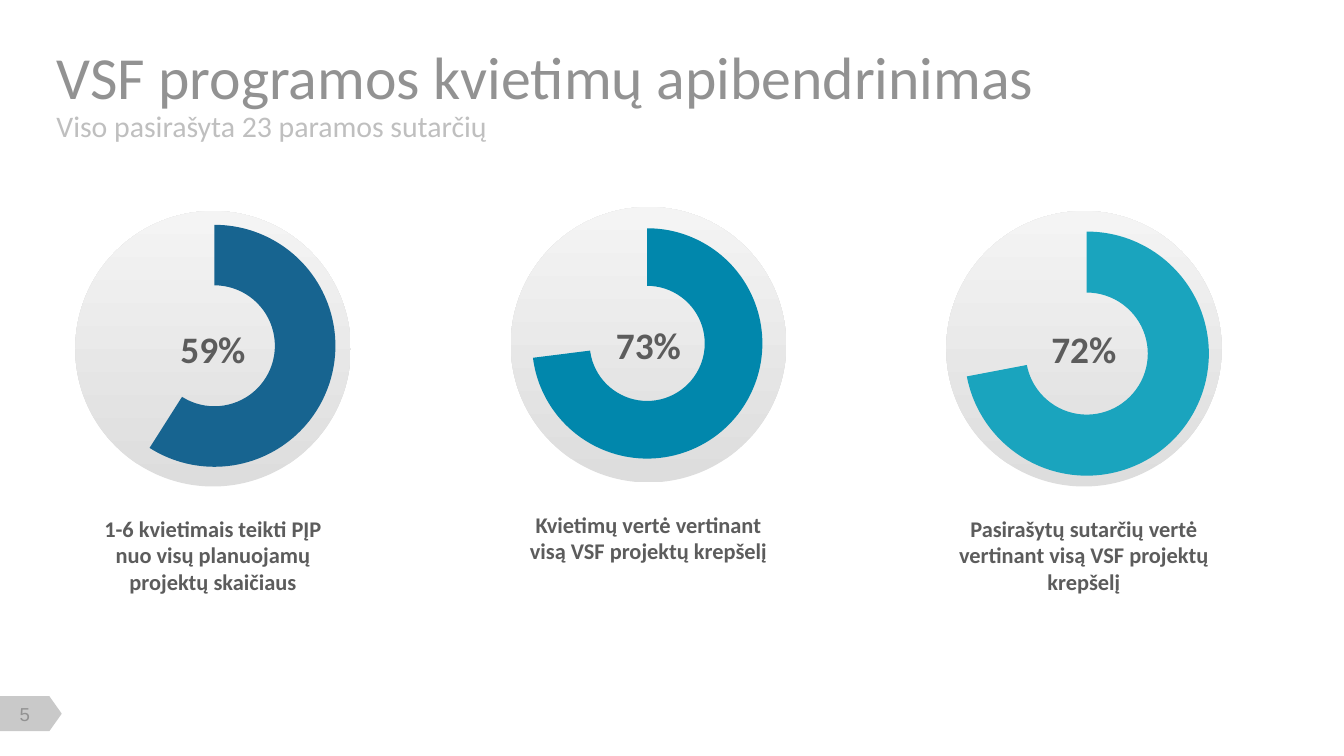
from lxml import etree
from pptx import Presentation
from pptx.chart.data import CategoryChartData
from pptx.dml.color import RGBColor
from pptx.enum.chart import XL_CHART_TYPE as Chart
from pptx.enum.shapes import MSO_SHAPE as Shape
from pptx.enum.text import MSO_ANCHOR as Anchor, PP_ALIGN as Align
from pptx.oxml.ns import qn
from pptx.util import Inches, Pt

TITLE = "VSF programos kvietimų apibendrinimas"
SUBTITLE = "Viso pasirašyta 23 paramos sutarčių"
PAGE_NUMBER = "5"
GAUGES = [
    dict(percent=59, color="176490", top=1.57, frame=(0.5, 1.44, 2.17, 2.29),
         plot=(0.09, 0.1, 0.83, 0.79),
         label="1-6 kvietimais teikti PĮP nuo visų planuojamų projektų skaičiaus"),
    dict(percent=73, color="0187AC", top=1.54, frame=(3.72, 1.4, 2.17, 2.29),
         plot=(0.11, 0.13, 0.79, 0.75),
         label="Kvietimų vertė vertinant visą VSF projektų krepšelį"),
    dict(percent=72, color="1AA4BE", top=1.57, frame=(6.98, 1.44, 2.17, 2.36),
         plot=(0.09, 0.12, 0.84, 0.77),
         label="Pasirašytų sutarčių vertė vertinant visą VSF projektų krepšelį"),
]
SLIDE_WIDTH = 10
SLIDE_HEIGHT = SLIDE_WIDTH * 9 / 16
LEFT, STEP, DISC = 0.56, 3.24, 2.05
LABEL_WIDTH, LABEL_DROP = 1.9, 2.26
MARGIN = 0.42
DARK, GRAY = "5C5C5C", "929292"


def rgb(value):
    return RGBColor.from_string(value)


def inches(*lengths):
    return [Inches(length) for length in lengths]


def write(shape, text, size, color, bold=False, align=Align.CENTER,
          anchor=Anchor.MIDDLE, font="Calibri", insets=(0, 0, 0, 0)):
    frame = shape.text_frame
    frame.word_wrap = True
    frame.vertical_anchor = anchor
    (frame.margin_left, frame.margin_top,
     frame.margin_right, frame.margin_bottom) = inches(*insets)
    para = frame.paragraphs[0]
    para.text = text
    para.alignment = align
    para.font.name, para.font.size, para.font.bold = font, Pt(size), bold
    para.font.color.rgb = rgb(color)


def add_plain_shape(page, kind, *box):
    shape = page.shapes.add_shape(kind, *inches(*box))
    shape.shadow.inherit = False
    shape.line.fill.background()
    return shape


def add_disc(page, left, gauge):
    disc = add_plain_shape(page, Shape.OVAL, left, gauge["top"], DISC, DISC)
    disc.fill.gradient()
    disc.fill.gradient_angle = 90
    for stop, color in zip(disc.fill.gradient_stops, ("DDDDDD", "F4F4F4")):
        stop.color.rgb = rgb(color)
    write(disc, f"{gauge['percent']}%", 20, DARK, bold=True)


def place_plot(chart, plot):
    area = chart._chartSpace.chart.plotArea
    for old in area.findall(qn("c:layout")):
        area.remove(old)
    layout = etree.Element(qn("c:layout"))
    manual = etree.SubElement(layout, qn("c:manualLayout"))
    settings = [("layoutTarget", "inner"), ("xMode", "edge"), ("yMode", "edge")]
    for tag, value in settings + list(zip("xywh", plot)):
        etree.SubElement(manual, qn(f"c:{tag}")).set("val", str(value))
    area.insert(0, layout)
    area.find(".//" + qn("c:holeSize")).set("val", "64")


def add_ring(page, gauge):
    data = CategoryChartData()
    data.categories = ["1", "2"]
    data.add_series("Series 1", (gauge["percent"], 100 - gauge["percent"]))
    chart = page.shapes.add_chart(Chart.DOUGHNUT, *inches(*gauge["frame"]), data).chart
    chart.has_legend = chart.has_title = False
    chart.font.name, chart.font.size = "Calibri", Pt(18)
    chart.font.color.rgb = rgb("262626")
    chart.plots[0].vary_by_categories = False
    filled, rest = (chart.series[0].points[index].format for index in range(2))
    filled.fill.solid()
    filled.fill.fore_color.rgb = rgb(gauge["color"])
    rest.fill.background()
    for part in (filled, rest):
        part.line.fill.background()
    place_plot(chart, gauge["plot"])


def add_label(page, left, gauge):
    box = page.shapes.add_textbox(*inches(
        left + (DISC - LABEL_WIDTH) / 2, gauge["top"] + LABEL_DROP, LABEL_WIDTH, 0.61))
    write(box, gauge["label"], 12, DARK, bold=True, anchor=Anchor.TOP)


def main():
    """Build the slide with three percentage gauges."""
    deck = Presentation()
    deck.slide_width, deck.slide_height = inches(SLIDE_WIDTH, SLIDE_HEIGHT)
    page = deck.slides.add_slide(deck.slide_layouts[5])

    title = page.shapes.title
    title.left, title.top, title.width, title.height = inches(MARGIN, 0.37, 9.15, 0.39)
    write(title, TITLE, 32, GRAY, align=Align.LEFT, insets=(0, 0.05, 0.1, 0.05))
    subtitle = page.shapes.add_textbox(*inches(MARGIN, 0.84, 9.13, 0.19))
    write(subtitle, SUBTITLE, 16, "BFBFBF", align=Align.LEFT)

    tag = add_plain_shape(page, Shape.FLOWCHART_OFFPAGE_CONNECTOR, 0.1, 5.08, 0.26, 0.46)
    tag.rotation = 270
    tag.fill.solid()
    tag.fill.fore_color.rgb = rgb("C9C9C9")
    number = page.shapes.add_textbox(*inches(0.02, 5.23, 0.33, 0.17))
    write(number, PAGE_NUMBER, 10, GRAY, font="Arial")

    for column, gauge in enumerate(GAUGES):
        left = LEFT + column * STEP
        add_disc(page, left, gauge)
        add_ring(page, gauge)
        add_label(page, left, gauge)
    deck.save("out.pptx")


if __name__ == "__main__":
    main()
